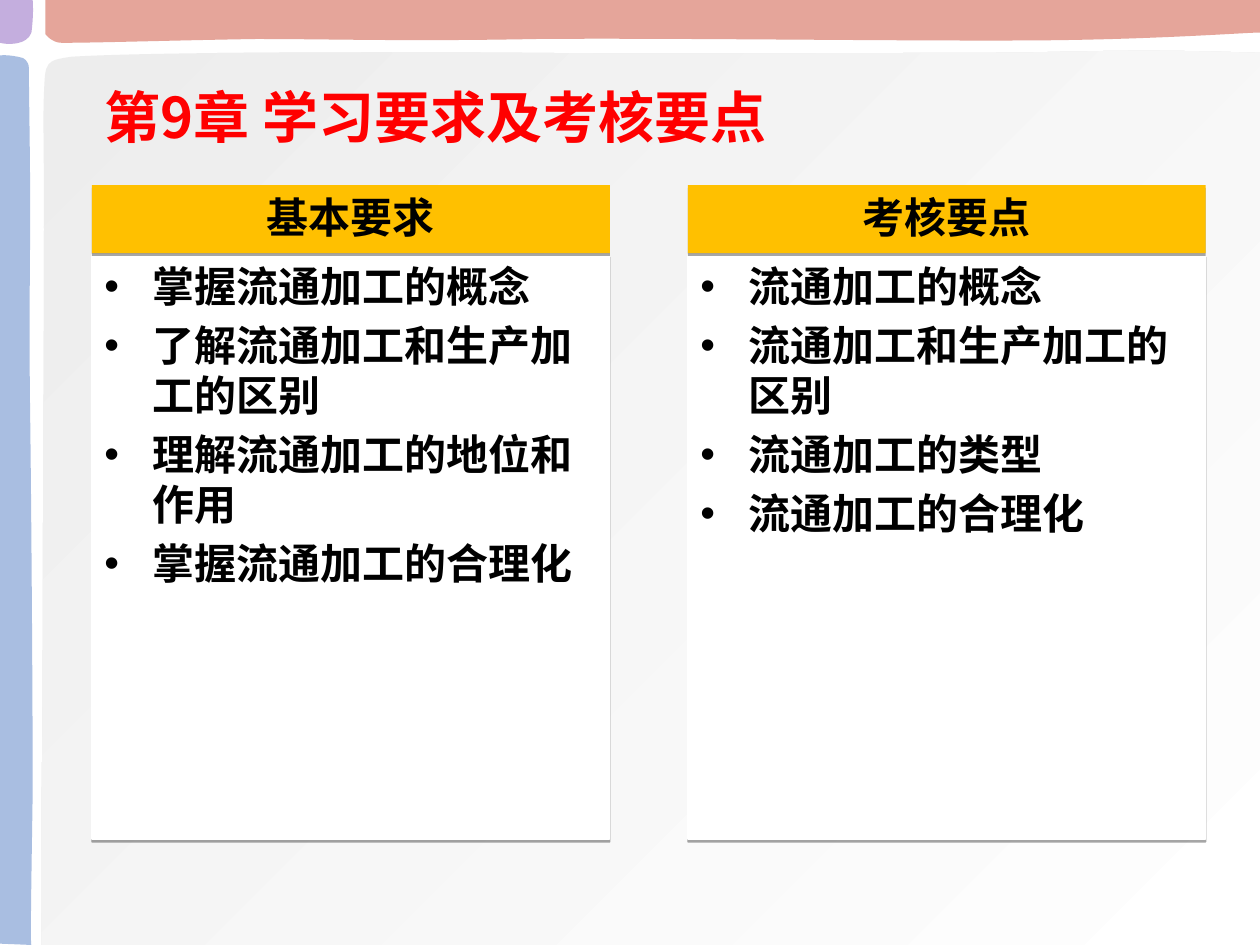
from dataclasses import dataclass

from lxml import etree
from pptx import Presentation
from pptx.dml.color import RGBColor
from pptx.enum.shapes import MSO_SHAPE
from pptx.enum.text import MSO_ANCHOR, PP_ALIGN
from pptx.oxml.ns import qn
from pptx.util import Inches, Pt

RECTANGLE = MSO_SHAPE.RECTANGLE
TOP, MIDDLE = MSO_ANCHOR.TOP, MSO_ANCHOR.MIDDLE
LEFT, CENTER = PP_ALIGN.LEFT, PP_ALIGN.CENTER


@dataclass(frozen=True)
class Theme:
    title: str = "FF0000"
    text: str = "000000"
    card: str = "FFFFFF"
    header: str = "FFC000"
    panel_start: str = "E6E6E6"
    panel_end: str = "FFFFFF"
    top_band: str = "DA7F70"
    left_band: str = "85A3D5"
    corner: str = "AC8CD0"
    title_font: str = "Noto Sans CJK JP"
    body_font: str = "Noto Sans CJK SC"
    title_size: int = 32
    body_size: int = 24
    line_pitch: float = 28.6
    paragraph_gap: float = 5.1
    band_alpha: int = 70
    shadow_alpha: int = 34


THEME = Theme()

# Outlines in inches: a pair is a line's end, six numbers are a Bézier curve
PANEL = [
    (10, 7.5), (10, 0.42),
    (8.86, 0.38, 8.55, 0.42, 7.6, 0.42), (6.66, 0.42, 5.5, 0.43, 4.33, 0.42),
    (3.16, 0.41, 1.23, 0.41, 0.57, 0.45), (0.36, 0.48, 0.36, 0.49, 0.35, 0.73),
    (0.34, 0.96, 0.35, 1.1, 0.35, 1.82), (0.35, 2.56, 0.34, 4.12, 0.34, 5.06),
    (0.34, 6.01, 0.32, 6.62, 0.33, 7.5), (5.17, 7.5, 10, 7.5, 10, 7.5),
]
TOP_BAND = [
    (10, 0), (10, 0.26),
    (10.01, 0.25, 9.28, 0.31, 8.32, 0.32), (7.36, 0.33, 5.31, 0.3, 4.26, 0.31),
    (3.21, 0.33, 2.65, 0.31, 2.03, 0.31), (1.4, 0.32, 0.77, 0.34, 0.49, 0.34),
    (0.41, 0.34, 0.36, 0.27, 0.36, 0.27), (0.36, 0.27, 0.36, 0.14, 0.36, 0),
    (10, 0),
]
LEFT_BAND = [
    (0, 7.49), (0.25, 7.5),
    (0.24, 7.51, 0.25, 6.98, 0.26, 6.28), (0.26, 5.58, 0.25, 4.07, 0.24, 3.3),
    (0.23, 2.54, 0.24, 2.12, 0.24, 1.67), (0.24, 1.21, 0.23, 0.75, 0.23, 0.54),
    (0.23, 0.48, 0.18, 0.46, 0.18, 0.46), (0.07, 0.43, 0, 0.44, 0, 0.44),
    (0, 7.49),
]
CORNER = [
    (0, 0), (0.26, 0), (0.27, 0.12, 0.25, 0.26, 0.25, 0.26),
    (0.23, 0.31, 0.19, 0.33, 0.15, 0.34), (0.07, 0.36, 0, 0.34, 0, 0.34),
    (0, 0),
]

COLUMNS = [
    ("基本要求", ["掌握流通加工的概念", "了解流通加工和生产加工的区别",
              "理解流通加工的地位和作用", "掌握流通加工的合理化"]),
    ("考核要点", ["流通加工的概念", "流通加工和生产加工的区别",
              "流通加工的类型", "流通加工的合理化"]),
]


def color(value):
    return RGBColor.from_string(value)


def bend_segments(shape, outline):
    """Turn the straight segments that stand for curves into Bézier curves."""
    lines = list(shape._element.iter(qn("a:lnTo")))
    for line, segment in zip(lines, outline[1:]):
        if len(segment) == 2:
            continue
        curve = etree.Element(qn("a:cubicBezTo"))
        for x, y in zip(segment[::2], segment[1::2]):
            etree.SubElement(curve, qn("a:pt"), x=str(Inches(x) - shape.left),
                             y=str(Inches(y) - shape.top))
        line.getparent().replace(line, curve)


def add_outline(slide, outline, start, end=None):
    points = [(Inches(segment[-2]), Inches(segment[-1])) for segment in outline]
    builder = slide.shapes.build_freeform(*points[0])
    builder.add_line_segments(points[1:], close=True)
    shape = builder.convert_to_shape()
    bend_segments(shape, outline)
    shape.shadow.inherit = False
    shape.line.fill.background()
    if end:
        shape.fill.gradient()
        shape.fill.gradient_angle = 315
        for stop, value in zip(shape.fill.gradient_stops, (start, end)):
            stop.color.rgb = color(value)
    else:
        shape.fill.solid()
        shape.fill.fore_color.rgb = color(start)
    for node in shape._element.spPr.iter(qn("a:srgbClr")):
        etree.SubElement(node, qn("a:alpha"), val=str(THEME.band_alpha * 1000))


def add_frame(slide):
    add_outline(slide, PANEL, THEME.panel_start, THEME.panel_end)
    add_outline(slide, TOP_BAND, THEME.top_band)
    add_outline(slide, LEFT_BAND, THEME.left_band)
    add_outline(slide, CORNER, THEME.corner)


def write_text(shape, lines, font, size, value, anchor, align):
    frame = shape.text_frame
    frame.word_wrap = True
    frame.vertical_anchor = anchor
    frame.text = "\n".join(lines)
    for paragraph in frame.paragraphs:
        paragraph.alignment = align
        for run in paragraph.runs:
            run.font.name, run.font.size, run.font.bold = font, Pt(size), True
            run.font.color.rgb = color(value)
            east_asian = etree.SubElement(run._r.get_or_add_rPr(), qn("a:ea"))
            east_asian.set("typeface", font)


def write_body(shape, lines, align):
    write_text(shape, lines, THEME.body_font, THEME.body_size, THEME.text, TOP, align)
    for paragraph in shape.text_frame.paragraphs:
        paragraph.space_before = Pt(THEME.paragraph_gap)
        paragraph.line_spacing = Pt(THEME.line_pitch)


def add_bullets(shape):
    for paragraph in shape.text_frame.paragraphs:
        properties = paragraph._p.get_or_add_pPr()
        properties.set("marL", str(Inches(0.38)))
        properties.set("indent", str(-Inches(0.38)))
        etree.SubElement(properties, qn("a:buFont"), typeface="Arial")
        etree.SubElement(properties, qn("a:buChar"), char="•")


def add_block(slide, left, top, width, height, fill):
    shape = slide.shapes.add_shape(RECTANGLE, left, top, width, height)
    shape.fill.solid()
    shape.fill.fore_color.rgb = color(fill)
    shape.line.fill.background()
    # Short hard shadow straight below
    shape.shadow.inherit = False
    effects = shape._element.spPr.find(qn("a:effectLst"))
    shadow = etree.SubElement(effects, qn("a:outerShdw"), blurRad="0",
                              dist=str(Pt(1.6)), dir="5400000", rotWithShape="0")
    shade = etree.SubElement(shadow, qn("a:srgbClr"), val=THEME.text)
    etree.SubElement(shade, qn("a:alpha"), val=str(THEME.shadow_alpha * 1000))
    return shape


def add_title(slide, left, top, width, height):
    box = slide.shapes.add_textbox(left, top, width, height)
    write_text(box, ["第9章 学习要求及考核要点"], THEME.title_font,
               THEME.title_size, THEME.title, MIDDLE, LEFT)


def add_column(slide, left, top, width, height, heading, items):
    card_offset, header_height = Inches(0.55), Inches(0.54)
    card = add_block(slide, left, top + card_offset, width,
                     height - card_offset, THEME.card)
    card.line.color.rgb = color(THEME.card)
    card.line.width = Pt(0.75)
    write_body(card, items, LEFT)
    add_bullets(card)
    header = add_block(slide, left, top, width, header_height, THEME.header)
    write_body(header, [heading], CENTER)


def main():
    presentation = Presentation()
    presentation.slide_width, presentation.slide_height = Inches(10), Inches(7.5)
    slide = presentation.slides.add_slide(presentation.slide_layouts[6])
    add_frame(slide)
    add_title(slide, Inches(0.73), Inches(0.41), Inches(6.79), Inches(1.03))
    for index, (heading, items) in enumerate(COLUMNS):
        add_column(slide, Inches(0.73 + 4.73 * index), Inches(1.47),
                   Inches(4.11), Inches(5.19), heading, items)
    presentation.save("out.pptx")


if __name__ == "__main__":
    main()
